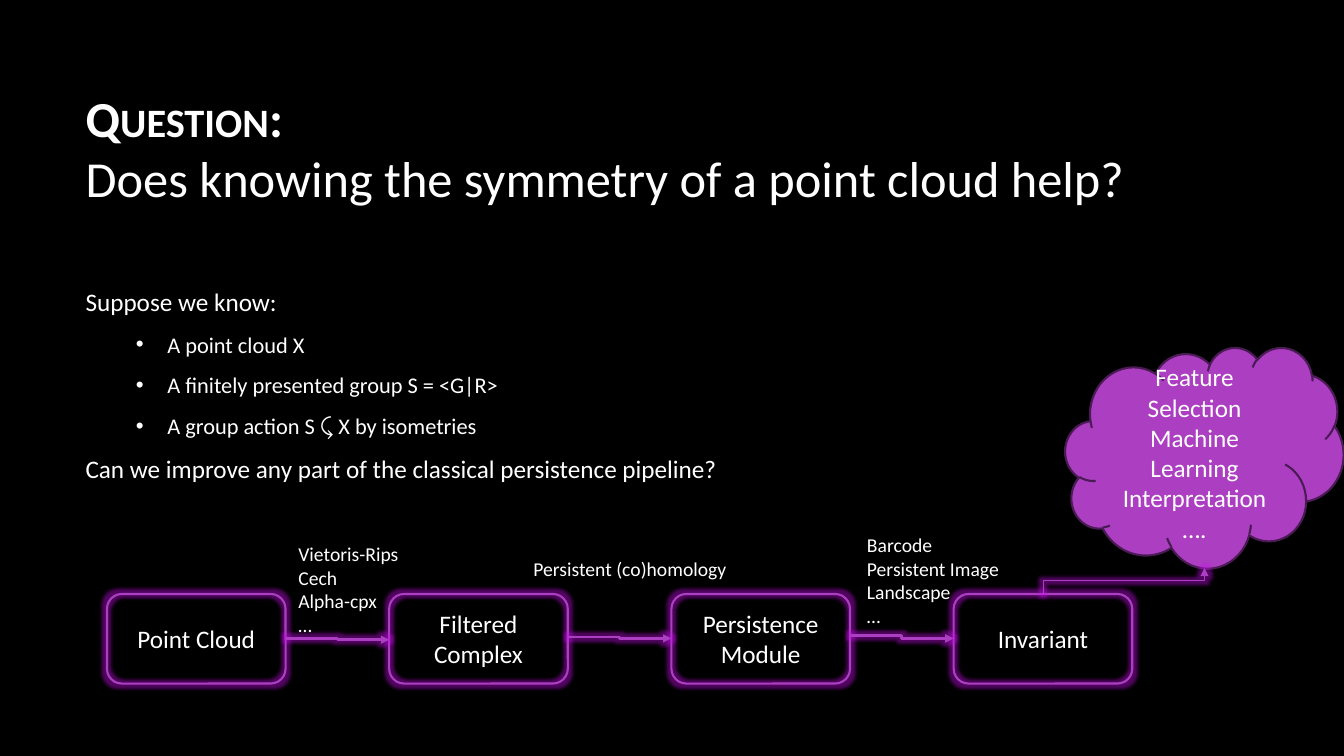
from lxml.etree import SubElement
from pptx import Presentation
from pptx.dml.color import RGBColor
from pptx.enum.shapes import MSO_CONNECTOR, MSO_SHAPE
from pptx.enum.text import MSO_ANCHOR, PP_ALIGN
from pptx.oxml.ns import qn
from pptx.util import Pt

FONT = "Calibri"
BLACK = RGBColor(0x00, 0x00, 0x00)
WHITE = RGBColor(0xFF, 0xFF, 0xFF)
PURPLE = RGBColor(0xAC, 0x3E, 0xC1)
PLUM = RGBColor(0x4B, 0x1B, 0x55)

TITLE = ["Question", ":", "Does knowing the symmetry of a point cloud help?"]
BODY = [  # text, is a bullet
    ("Suppose we know:", False),
    ("A point cloud X", True),
    ("A finitely presented group S = <G|R>", True),
    ("A group action S ⤹ X by isometries", True),
    ("Can we improve any part of the classical persistence pipeline?", False),
]
STAGES = ["Point Cloud", "Filtered Complex", "Persistence Module", "Invariant"]
STEPS = [  # lines, left, top, height of the label; start and end height of the arrow
    (["Vietoris-Rips", "Cech", "Alpha-cpx", "…"], 206, 383.8, 75, 455.9, 456.9),
    (["Persistent (co)homology"], 373.9, 394.6, 24.5, 455, 456),
    (["Barcode", "Persistent Image", "Landscape", "…"], 612.2, 377.3, 75, 454, 456),
]
USES = ["Feature Selection", "Machine Learning", "Interpretation", "…."]

STAGE_LEFT, STAGE_TOP, STAGE_W, STAGE_H, STAGE_PITCH = 76.4, 424.3, 127.6, 64, 201.6
LABEL_W = 157.7
CLOUD = (761, 248, 198.7, 157.7)


def add_run(p, text, size=18, bold=False, small_caps=False):
    r = p.add_run()
    r.text = text
    r.font.name, r.font.size, r.font.bold = FONT, Pt(size), bold
    r.font.color.rgb = WHITE
    if small_caps:
        r.font._element.set("cap", "small")


def write(s, lines, size=18, align=PP_ALIGN.LEFT, anchor=MSO_ANCHOR.TOP):
    tf = s.text_frame
    tf.word_wrap, tf.vertical_anchor = True, anchor
    for i, line in enumerate(lines):
        p = tf.paragraphs[0] if i == 0 else tf.add_paragraph()
        p.alignment = align
        add_run(p, line, size=size)
    return tf


def set_bullet(p):
    pPr = p._p.get_or_add_pPr()
    pPr.set("marL", str(Pt(58.5)))
    pPr.set("indent", str(Pt(-22.5)))
    color = SubElement(pPr, qn("a:buClr"))
    SubElement(color, qn("a:srgbClr"), val=str(WHITE))
    SubElement(pPr, qn("a:buFont"), typeface="Arial")
    SubElement(pPr, qn("a:buChar"), char="•")


def add_glow(effects):
    glow = SubElement(effects, qn("a:glow"), rad=str(Pt(5)))
    color = SubElement(glow, qn("a:srgbClr"), val=str(PURPLE))
    SubElement(color, qn("a:satMod"), val="175000")
    SubElement(color, qn("a:alpha"), val="40000")


def add_block(slide, shape, box, lines, line_color, fill=None):
    s = slide.shapes.add_shape(shape, *map(Pt, box))
    s.shadow.inherit = False
    s.line.color.rgb, s.line.width = line_color, Pt(1.5)
    if fill is None:
        s.fill.background()
        add_glow(s._element.spPr.find(qn("a:effectLst")))
    else:
        s.fill.solid()
        s.fill.fore_color.rgb = fill
    write(s, lines, align=PP_ALIGN.CENTER, anchor=MSO_ANCHOR.MIDDLE)


def add_arrow(slide, x1, y1, x2, y2, width=2):
    s = slide.shapes.add_connector(MSO_CONNECTOR.ELBOW, *map(Pt, (x1, y1, x2, y2)))
    s.line.color.rgb, s.line.width = PURPLE, Pt(width)
    spPr = s._element.spPr
    SubElement(spPr.find(qn("a:ln")), qn("a:tailEnd"), type="triangle")
    add_glow(SubElement(spPr, qn("a:effectLst")))
    return s


def add_rising_arrow(slide, x1, y1, x2, y2):
    """Elbow that leaves and arrives vertically: a flipped one turned by 90 degrees."""
    cx, cy = (x1 + x2) / 2, (y1 + y2) / 2
    dx, dy = (y1 - y2) / 2, (x2 - x1) / 2
    s = add_arrow(slide, cx + dx, cy + dy, cx - dx, cy - dy, width=0.75)
    s._element.spPr.find(qn("a:xfrm")).set("rot", str(90 * 60000))


def add_headings(slide):
    s = slide.shapes.title
    s.left, s.top, s.width, s.height = map(Pt, (54, 48.2, 797.8, 114.5))
    tf = s.text_frame
    tf.word_wrap, tf.vertical_anchor = True, MSO_ANCHOR.MIDDLE
    p = tf.paragraphs[0]
    p.alignment = PP_ALIGN.LEFT
    name, colon, question = TITLE
    add_run(p, name, size=36, bold=True, small_caps=True)
    add_run(p, colon, size=36, bold=True)
    p.add_line_break()
    add_run(p, question, size=36)

    s = slide.shapes.add_textbox(*map(Pt, (54, 168.5, 797.8, 213)))
    tf = s.text_frame
    tf.word_wrap, tf.vertical_anchor = True, MSO_ANCHOR.MIDDLE
    for i, (text, bullet) in enumerate(BODY):
        p = tf.paragraphs[0] if i == 0 else tf.add_paragraph()
        p.space_after = Pt(10)
        if bullet:
            set_bullet(p)
        add_run(p, text, size=16 if bullet else 18)


def add_pipeline(slide):
    lefts = [STAGE_LEFT + i * STAGE_PITCH for i in range(len(STAGES))]
    for left, stage in zip(lefts, STAGES):
        add_block(slide, MSO_SHAPE.ROUNDED_RECTANGLE,
                  (left, STAGE_TOP, STAGE_W, STAGE_H), [stage], PURPLE)
    add_block(slide, MSO_SHAPE.CLOUD, CLOUD, USES, PLUM, fill=PURPLE)
    for i, (lines, left, top, height, y1, y2) in enumerate(STEPS):
        add_arrow(slide, lefts[i] + STAGE_W, y1, lefts[i + 1], y2)
        label = slide.shapes.add_textbox(*map(Pt, (left, top, LABEL_W, height)))
        write(label, lines, size=14)
    x, y, w, h = CLOUD
    add_rising_arrow(slide, lefts[-1] + STAGE_W / 2, STAGE_TOP, x + w / 2, y + h)


def main():
    prs = Presentation()
    prs.slide_width, prs.slide_height = Pt(960), Pt(540)
    slide = prs.slides.add_slide(prs.slide_layouts[5])
    slide.background.fill.solid()
    slide.background.fill.fore_color.rgb = BLACK
    add_headings(slide)
    add_pipeline(slide)
    prs.save("out.pptx")


if __name__ == "__main__":
    main()
